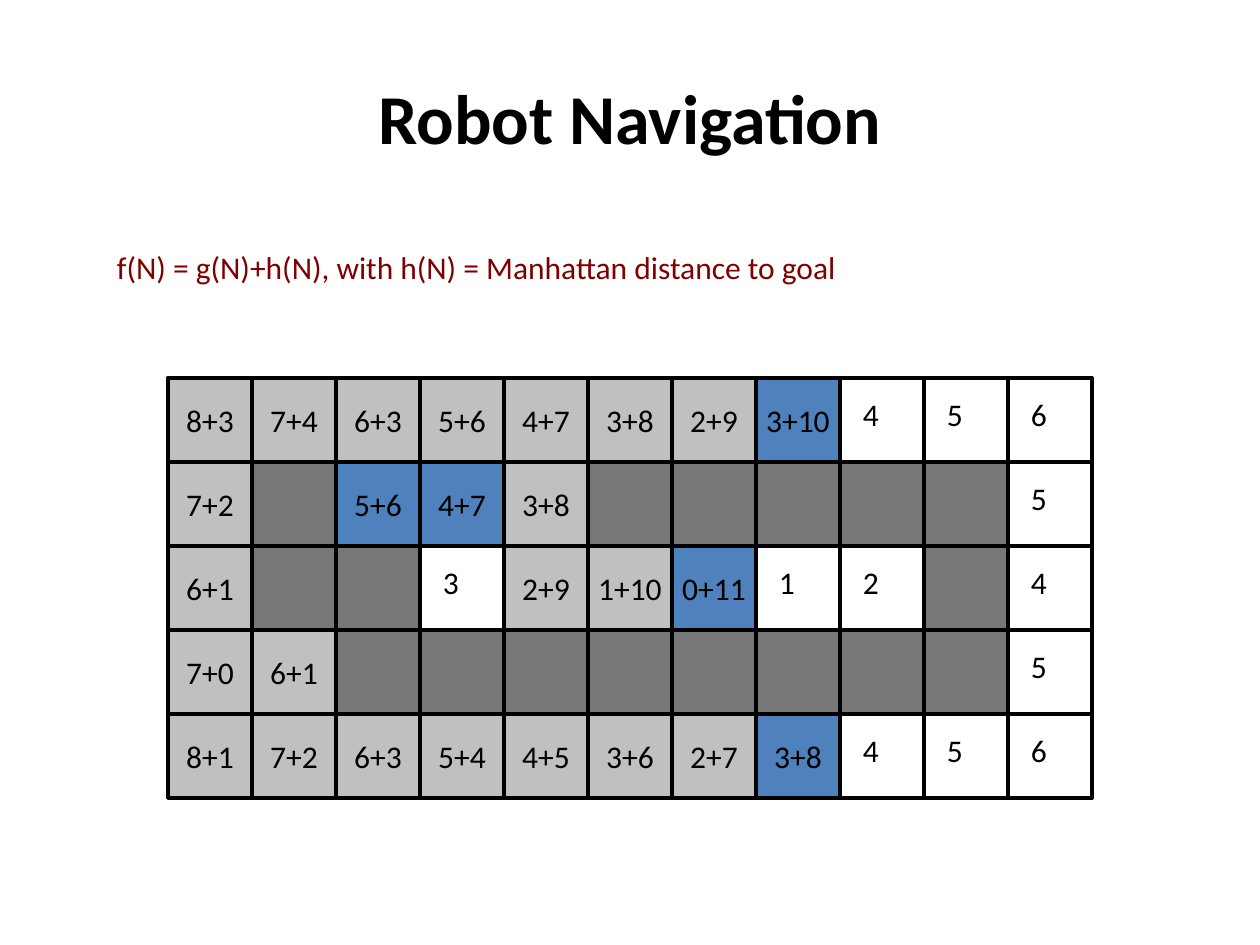
from pptx import Presentation
from pptx.dml.color import RGBColor
from pptx.enum.shapes import MSO_CONNECTOR, MSO_SHAPE
from pptx.enum.text import MSO_ANCHOR, PP_ALIGN
from pptx.oxml.ns import qn
from pptx.util import Inches, Pt
from lxml import etree

RECTANGLE, STRAIGHT = MSO_SHAPE.RECTANGLE, MSO_CONNECTOR.STRAIGHT
TOP, MIDDLE = MSO_ANCHOR.TOP, MSO_ANCHOR.MIDDLE
LEFT, CENTER = PP_ALIGN.LEFT, PP_ALIGN.CENTER

BLACK = RGBColor(0x00, 0x00, 0x00)
MAROON = RGBColor(0x80, 0x00, 0x00)
WALL_GRAY = RGBColor(0x77, 0x77, 0x77)
VISITED_GRAY = RGBColor(0xC0, 0xC0, 0xC0)
FRONTIER_BLUE = RGBColor(0x4F, 0x81, 0xBD)

TITLE = "Robot Navigation"
FORMULA = "f(N) = g(N)+h(N), with h(N) = Manhattan distance to goal"
# "#" is a wall, "g+h" a visited cell, "*g+h" a frontier cell, a lone number an unvisited cell
MAZE = [
    "8+3 7+4 6+3 5+6 4+7 3+8 2+9 *3+10 4 5 6".split(),
    "7+2 # *5+6 *4+7 3+8 # # # # # 5".split(),
    "6+1 # # 3 2+9 1+10 *0+11 1 2 # 4".split(),
    "7+0 6+1 # # # # # # # # 5".split(),
    "8+1 7+2 6+3 5+4 4+5 3+6 2+7 *3+8 4 5 6".split(),
]

SLIDE_W, SLIDE_H = Inches(10), Inches(7.5)
ROWS, COLUMNS = len(MAZE), len(MAZE[0])
CELL = SLIDE_W // 15
MAZE_X, MAZE_Y = 2 * CELL, SLIDE_H * 2 // 5
MAZE_RIGHT, MAZE_BOTTOM = MAZE_X + COLUMNS * CELL, MAZE_Y + ROWS * CELL
VALUE_INSET = CELL // 8
VALUE_W, VALUE_H = Inches(0.38), Inches(0.5)
BORDER = Pt(2.25)

BODY = {"size": Pt(18), "name": "Calibri", "bold": False}
HEADING = {"size": Pt(40), "name": "Calibri", "bold": True}


def write(shape, text, font=BODY, color=BLACK, align=LEFT, anchor=TOP, wrap=False):
    frame = shape.text_frame
    frame.word_wrap = wrap
    frame.vertical_anchor = anchor
    paragraph = frame.paragraphs[0]
    paragraph.alignment = align
    run = paragraph.add_run()
    run.text = text
    for key, value in font.items():
        setattr(run.font, key, value)
    run.font.color.rgb = color


def add_box(shapes, x, y, width, height, fill=None):
    """Add a black-bordered rectangle, see-through when no fill is given."""
    box = shapes.add_shape(RECTANGLE, x, y, width, height)
    box.shadow.inherit = False
    if fill is None:
        box.fill.background()
    else:
        box.fill.solid()
        box.fill.fore_color.rgb = fill
    box.line.color.rgb = BLACK
    box.line.width = BORDER
    return box


def add_grid_line(shapes, *ends):
    line = shapes.add_connector(STRAIGHT, *ends)
    line.line.color.rgb = BLACK
    line.line.width = BORDER
    etree.SubElement(line._element.spPr, qn("a:effectLst"))


def add_cell(shapes, row, column, content):
    x, y = MAZE_X + column * CELL, MAZE_Y + row * CELL
    if content == "#":
        add_box(shapes, x, y, CELL, CELL, WALL_GRAY)
    elif "+" in content:
        fill = FRONTIER_BLUE if content.startswith("*") else VISITED_GRAY
        cell = add_box(shapes, x, y, CELL, CELL, fill)
        write(cell, content.lstrip("*"), align=CENTER, anchor=MIDDLE)
    else:
        value = shapes.add_textbox(x + VALUE_INSET, y + VALUE_INSET, VALUE_W, VALUE_H)
        write(value, content)


def main():
    deck = Presentation()
    deck.slide_width, deck.slide_height = SLIDE_W, SLIDE_H
    shapes = deck.slides.add_slide(deck.slide_layouts[6]).shapes

    title = shapes.add_textbox(Inches(0.5), Inches(0.3), Inches(9), Inches(1.25))
    write(title, TITLE, HEADING, align=CENTER, anchor=MIDDLE, wrap=True)
    formula = shapes.add_textbox(Inches(0.83), Inches(1.92), Inches(8.85), Inches(0.5))
    write(formula, FORMULA, color=MAROON)

    add_box(shapes, MAZE_X, MAZE_Y, COLUMNS * CELL, ROWS * CELL)
    for column in range(1, COLUMNS):
        x = MAZE_X + column * CELL
        add_grid_line(shapes, x, MAZE_Y, x, MAZE_BOTTOM)
    for row in range(1, ROWS):
        y = MAZE_Y + row * CELL
        add_grid_line(shapes, MAZE_X, y, MAZE_RIGHT, y)
    for row, contents in enumerate(MAZE):
        for column, content in enumerate(contents):
            add_cell(shapes, row, column, content)

    deck.save("out.pptx")


if __name__ == "__main__":
    main()
